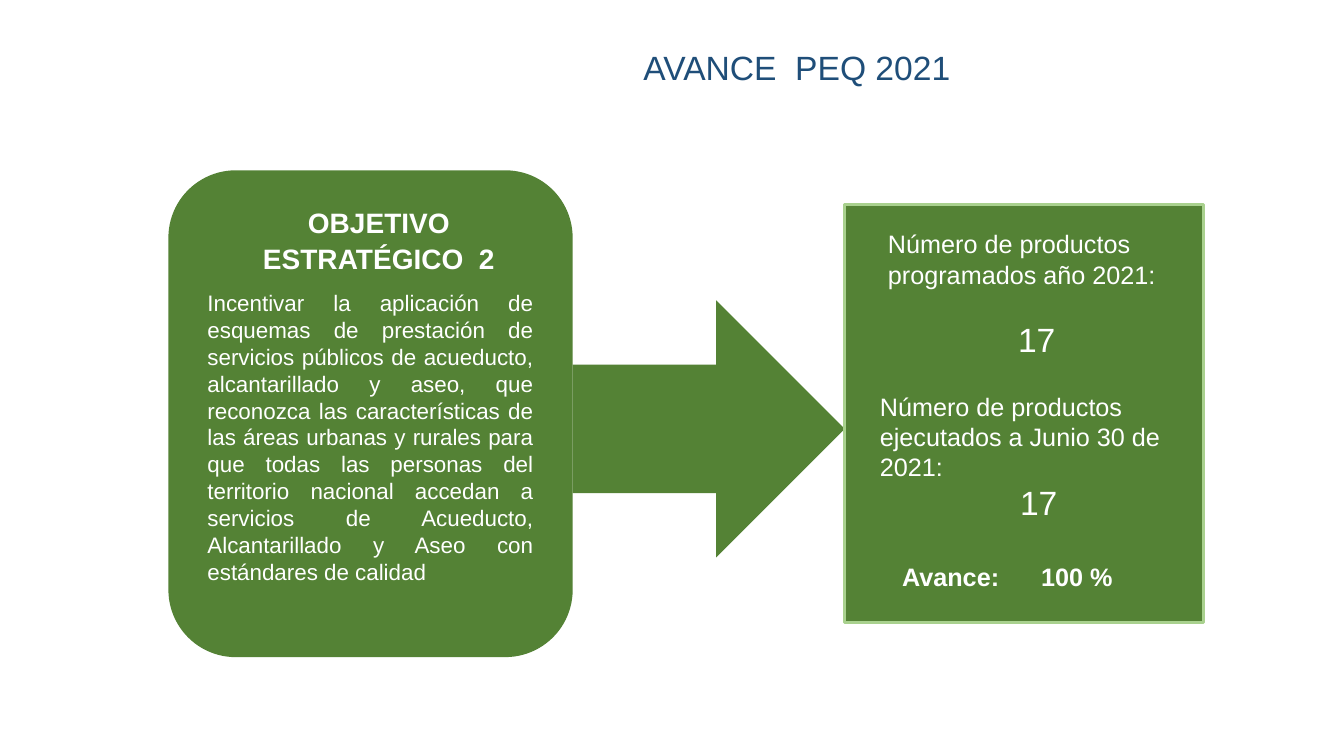
from pptx import Presentation
from pptx.dml.color import RGBColor
from pptx.enum.shapes import MSO_SHAPE
from pptx.enum.text import PP_ALIGN
from pptx.oxml.xmlchemy import OxmlElement
from pptx.util import Inches, Pt

COLORS = {"green": "548235", "edge": "A9D18E", "navy": "1F4E79", "white": "FFFFFF"}
WIDTH, HEIGHT = Inches(13.33), Inches(7.5)

# Areas are left, top, width, height in percent of the slide.
OBJECTIVE_AREA = (12.53, 22.53, 30.08, 64.4)
RESULTS_AREA = (62.85, 27.07, 26.7, 55.33)
ARROW_TOP, ARROW_HEIGHT = 39.73, 34

TEXTS = [
    {"area": (18.67, 26.27, 19.05, 10.8),
     "lines": [{"text": "OBJETIVO ESTRATÉGICO  2", "size": 20, "bold": True,
                "align": PP_ALIGN.CENTER, "spacing": 1.07}]},
    {"area": (14.7, 37.6, 25.72, 40.8),
     "lines": [{"text": "Incentivar la aplicación de esquemas de prestación de servicios "
                        "públicos de acueducto, alcantarillado y aseo, que reconozca las "
                        "características de las áreas urbanas y rurales para que todas las "
                        "personas del territorio nacional accedan a servicios de Acueducto, "
                        "Alcantarillado y Aseo con estándares de calidad",
                "size": 16, "align": PP_ALIGN.JUSTIFY}]},
    {"area": (24.83, 5.6, 68.93, 6.67),
     "lines": [{"text": "AVANCE  PEQ 2021", "size": 24, "color": "navy",
                "align": PP_ALIGN.CENTER}]},
    {"area": (65.33, 29.6, 24.75, 18.8),
     "lines": [{"text": "Número de productos programados año 2021:", "size": 18},
               {"text": "17", "size": 24, "indent": 1.29, "before": 21}]},
    {"area": (64.73, 51.07, 24.3, 18.8),
     "lines": [{"text": "Número de productos ejecutados a Junio 30 de 2021:", "size": 18},
               {"text": "17", "size": 24, "indent": 1.39}]},
    {"area": (66.38, 73.6, 22.65, 5.33),
     "lines": [{"text": "Avance:\t100 %", "size": 18, "bold": True, "tab": 1.38}]},
]


def color(name):
    return RGBColor.from_string(COLORS[name])


def place(area):
    left, top, width, height = area
    return [round(share * side / 100) for share, side in
            ((left, WIDTH), (top, HEIGHT), (width, WIDTH), (height, HEIGHT))]


def add_panel(slide, preset, area, edge=None):
    panel = slide.shapes.add_shape(preset, *place(area))
    panel.shadow.inherit = False
    panel.fill.solid()
    panel.fill.fore_color.rgb = color("green")
    if edge:
        panel.line.color.rgb = color(edge)
        panel.line.width = Pt(2)
    else:
        panel.line.fill.background()
    return panel


def add_tab(paragraph, inches):
    stops = OxmlElement("a:tabLst")
    stop = OxmlElement("a:tab")
    stop.set("pos", str(Inches(inches)))
    stop.set("algn", "l")
    stops.append(stop)
    paragraph._p.get_or_add_pPr().append(stops)


def write_line(paragraph, line):
    paragraph.text = line["text"]
    paragraph.alignment = line.get("align", PP_ALIGN.LEFT)
    if "spacing" in line:
        paragraph.line_spacing = line["spacing"]
    if "before" in line:
        paragraph.space_before = Pt(line["before"])
    if "indent" in line:
        paragraph._p.get_or_add_pPr().set("marL", str(Inches(line["indent"])))
    if "tab" in line:
        add_tab(paragraph, line["tab"])
    font = paragraph.font
    font.name = "Arial"
    font.size = Pt(line["size"])
    font.bold = line.get("bold", False)
    font.color.rgb = color(line.get("color", "white"))


def add_text(slide, area, lines):
    frame = slide.shapes.add_textbox(*place(area)).text_frame
    frame.word_wrap = True
    for index, line in enumerate(lines):
        write_line(frame.add_paragraph() if index else frame.paragraphs[0], line)


def main():
    deck = Presentation()
    deck.slide_width, deck.slide_height = WIDTH, HEIGHT
    slide = deck.slides.add_slide(deck.slide_layouts[6])

    objective = add_panel(slide, MSO_SHAPE.ROUNDED_RECTANGLE, OBJECTIVE_AREA)
    objective.adjustments[0] = 1 / 6
    arrow_left = OBJECTIVE_AREA[0] + OBJECTIVE_AREA[2]
    arrow_width = RESULTS_AREA[0] - arrow_left
    add_panel(slide, MSO_SHAPE.RIGHT_ARROW,
              (arrow_left, ARROW_TOP, arrow_width, ARROW_HEIGHT))
    add_panel(slide, MSO_SHAPE.RECTANGLE, RESULTS_AREA, "edge")
    for block in TEXTS:
        add_text(slide, **block)

    deck.save("out.pptx")


if __name__ == "__main__":
    main()
